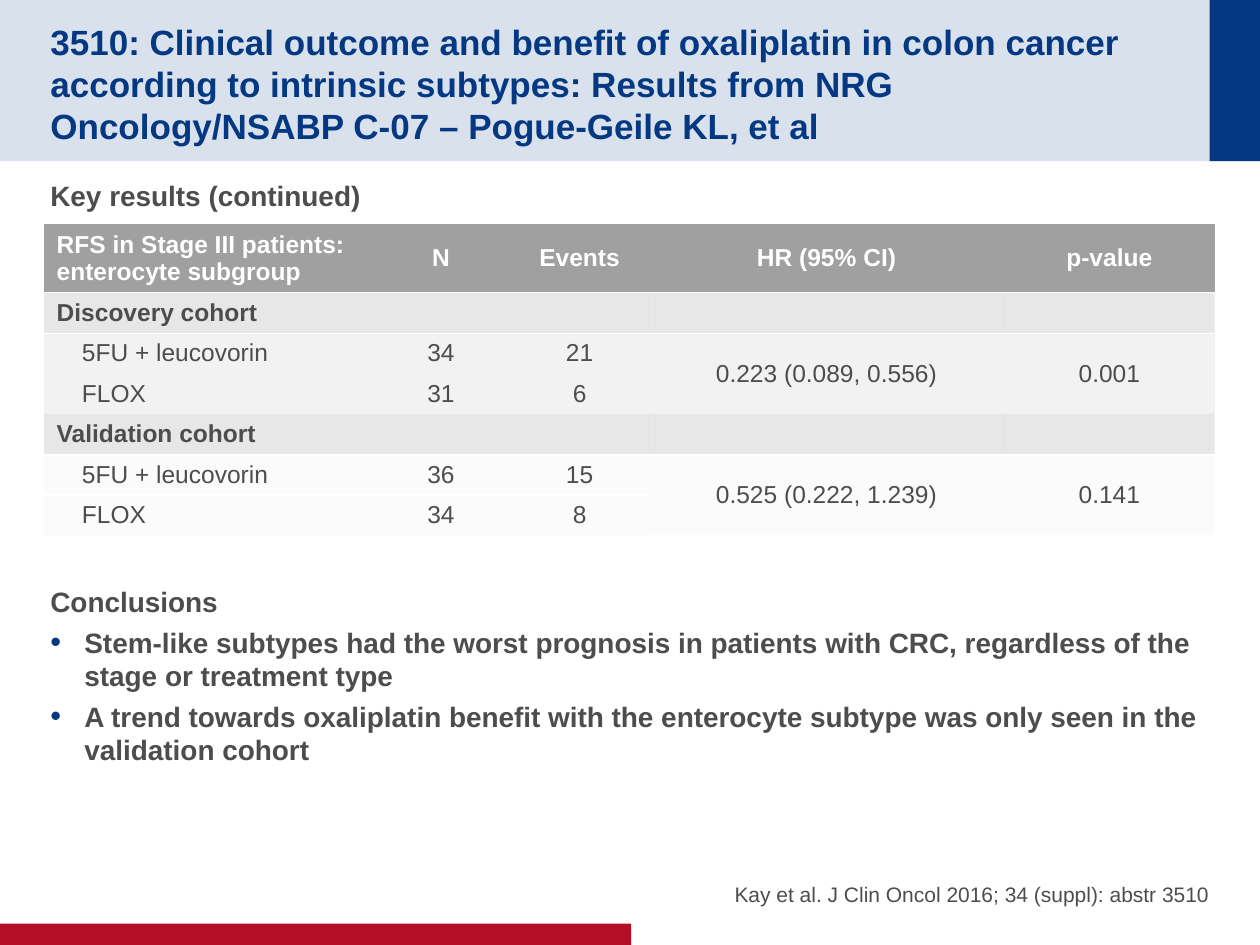
from lxml import etree
from pptx import Presentation
from pptx.dml.color import RGBColor
from pptx.enum.shapes import MSO_SHAPE
from pptx.enum.text import MSO_ANCHOR, MSO_AUTO_SIZE, PP_ALIGN
from pptx.oxml.ns import qn
from pptx.util import Inches, Pt

RECT = MSO_SHAPE.RECTANGLE
TOP, MIDDLE, BOTTOM = MSO_ANCHOR.TOP, MSO_ANCHOR.MIDDLE, MSO_ANCHOR.BOTTOM
LEFT, CENTER, RIGHT = PP_ALIGN.LEFT, PP_ALIGN.CENTER, PP_ALIGN.RIGHT
NO_FIT = MSO_AUTO_SIZE.NONE

COLORS = {"navy": "043882", "red": "B60D27", "text": "4D4D4D",
          "gray": "A0A0A0", "light": "F2F2F2", "white": "FFFFFF"}
FONT = "Arial"
PLAIN_TABLE = "{2D5ABB26-0587-4C30-8999-92F81FD0307C}"

TITLE = ("3510: Clinical outcome and benefit of oxaliplatin in colon cancer "
         "according to intrinsic subtypes: Results from NRG Oncology/NSABP C-07 "
         "– Pogue-Geile KL, et al")
CONCLUSIONS = [
    "Stem-like subtypes had the worst prognosis in patients with CRC, "
    "regardless of the stage or treatment type",
    "A trend towards oxaliplatin benefit with the enterocyte subtype was "
    "only seen in the validation cohort",
]
CITATION = "Kay et al. J Clin Oncol 2016; 34 (suppl): abstr 3510"
BANDS = [
    (0, 0, 10, 1.28, "navy", 15),
    (9.6, 0, 0.4, 1.28, "navy", 100),
    (0, 7.33, 5.01, 0.17, "red", 100),
]
ROWS = [
    ("header", ["RFS in Stage III patients: enterocyte subgroup", "N", "Events",
                "HR (95% CI)", "p-value"]),
    ("cohort", ["Discovery cohort", "", "", "", ""]),
    ("discovery", ["5FU + leucovorin", "34", "21", "0.223 (0.089, 0.556)", "0.001"]),
    ("discovery", ["FLOX", "31", "6", "", ""]),
    ("cohort", ["Validation cohort", "", "", "", ""]),
    ("validation", ["5FU + leucovorin", "36", "15", "0.525 (0.222, 1.239)", "0.141"]),
    ("validation", ["FLOX", "34", "8", "", ""]),
]
ROW_STYLES = {
    "header": ("gray", 100, "white", True),
    "cohort": ("gray", 25, "text", True),
    "discovery": ("light", 100, "text", False),
    "validation": ("light", 25, "text", False),
}
COL_WIDTHS = [2.6, 1.1, 1.1, 2.82, 1.67]
HEADER_HEIGHT, ROW_HEIGHT = 0.54, 0.32
MERGED_ROWS, MERGED_COLS = (2, 5), (3, 4)
RULES = {0: ["B"], 1: ["T"], 4: ["B"], 5: ["T", "B"], 6: ["T"]}


def rgb(name):
    return RGBColor.from_string(COLORS[name])


def set_fill(fill, parent, color, opacity):
    fill.solid()
    fill.fore_color.rgb = rgb(color)
    if opacity < 100:
        clr = parent.find(qn("a:solidFill")).find(qn("a:srgbClr"))
        etree.SubElement(clr, qn("a:alpha"), val=str(opacity * 1000))


def add_run(p, text, size, color, bold=False):
    r = p.add_run()
    r.text = text
    r.font.name, r.font.size, r.font.bold = FONT, Pt(size), bold
    r.font.color.rgb = rgb(color)


def set_frame(tf, anchor, top, bottom):
    tf.word_wrap, tf.auto_size = True, NO_FIT
    tf.vertical_anchor = anchor
    tf.margin_left = tf.margin_right = 0
    tf.margin_top, tf.margin_bottom = Inches(top), Inches(bottom)


def add_text(s, box, paragraphs, size, bold, anchor=TOP, align=LEFT, pad=0.05):
    tf = s.shapes.add_textbox(*map(Inches, box)).text_frame
    set_frame(tf, anchor, pad, pad)
    for i, (text, bulleted) in enumerate(paragraphs):
        p = tf.add_paragraph() if i else tf.paragraphs[0]
        p.alignment, p.space_after = align, Pt(4)
        if bulleted:
            add_bullet(p)
        add_run(p, text, size, "text", bold)


def add_bullet(p):
    ppr = p._p.get_or_add_pPr()
    ppr.set("marL", str(Inches(0.27)))
    ppr.set("indent", str(Inches(-0.27)))
    clr = etree.SubElement(ppr, qn("a:buClr"))
    etree.SubElement(clr, qn("a:srgbClr"), val=COLORS["navy"])
    etree.SubElement(ppr, qn("a:buSzPct"), val="110000")
    etree.SubElement(ppr, qn("a:buFont"), typeface=FONT)
    etree.SubElement(ppr, qn("a:buChar"), char="•")


def add_rule(tcpr, side):
    ln = etree.SubElement(tcpr, qn("a:ln" + side), w=str(Pt(1)))
    fill = etree.SubElement(ln, qn("a:solidFill"))
    etree.SubElement(fill, qn("a:srgbClr"), val=COLORS["white"])


def add_results_table(s):
    heights = [HEADER_HEIGHT] + [ROW_HEIGHT] * (len(ROWS) - 1)
    frame = s.shapes.add_table(len(ROWS), len(COL_WIDTHS), Inches(0.35), Inches(1.78),
                               Inches(sum(COL_WIDTHS)), Inches(sum(heights)))
    table = frame.table
    table.horz_banding = False
    table._tbl.tblPr.find(qn("a:tableStyleId")).text = PLAIN_TABLE
    for col, width in zip(table.columns, COL_WIDTHS):
        col.width = Inches(width)
    for row, height in zip(table.rows, heights):
        row.height = Inches(height)
    for i, (kind, values) in enumerate(ROWS):
        fill, opacity, color, bold = ROW_STYLES[kind]
        for j, text in enumerate(values):
            cell = table.cell(i, j)
            cell.vertical_anchor = MIDDLE
            cell.margin_top = cell.margin_bottom = Inches(0.01)
            tcpr = cell._tc.get_or_add_tcPr()
            for side in RULES.get(i, []):
                add_rule(tcpr, side)
            set_fill(cell.fill, tcpr, fill, opacity)
            p = cell.text_frame.paragraphs[0]
            p.alignment = CENTER if j else LEFT
            if j == 0 and not bold:
                p._p.get_or_add_pPr().set("marL", str(Inches(0.2)))
            if text:
                add_run(p, text, 14, color, bold)
    for i in MERGED_ROWS:
        for j in MERGED_COLS:
            table.cell(i, j).merge(table.cell(i + 1, j))


def main():
    prs = Presentation()
    prs.slide_width, prs.slide_height = Inches(10), Inches(7.5)
    s = prs.slides.add_slide(prs.slide_layouts[5])
    for *box, color, opacity in BANDS:
        sp = s.shapes.add_shape(RECT, *map(Inches, box))
        sp.shadow.inherit = False
        sp.line.fill.background()
        set_fill(sp.fill, sp._element.spPr, color, opacity)

    title = s.shapes.title
    title._element.getparent().append(title._element)
    title.left, title.top = Inches(0.4), Inches(0.2)
    title.width, title.height = Inches(9.01), Inches(0.88)
    set_frame(title.text_frame, MIDDLE, 0.05, 0)
    p = title.text_frame.paragraphs[0]
    p.alignment = LEFT
    add_run(p, TITLE, 20, "navy", True)

    add_text(s, (0.4, 1.37, 9.2, 0.4), [("Key results (continued)", False)], 16, True)
    add_text(s, (0.4, 4.59, 9.2, 1.97),
             [("Conclusions", False)] + [(text, True) for text in CONCLUSIONS], 16, True)
    add_text(s, (5.08, 6.67, 4.52, 0.53), [(CITATION, False)], 12, False,
             BOTTOM, RIGHT, 0)
    add_results_table(s)
    prs.save("out.pptx")


if __name__ == "__main__":
    main()
